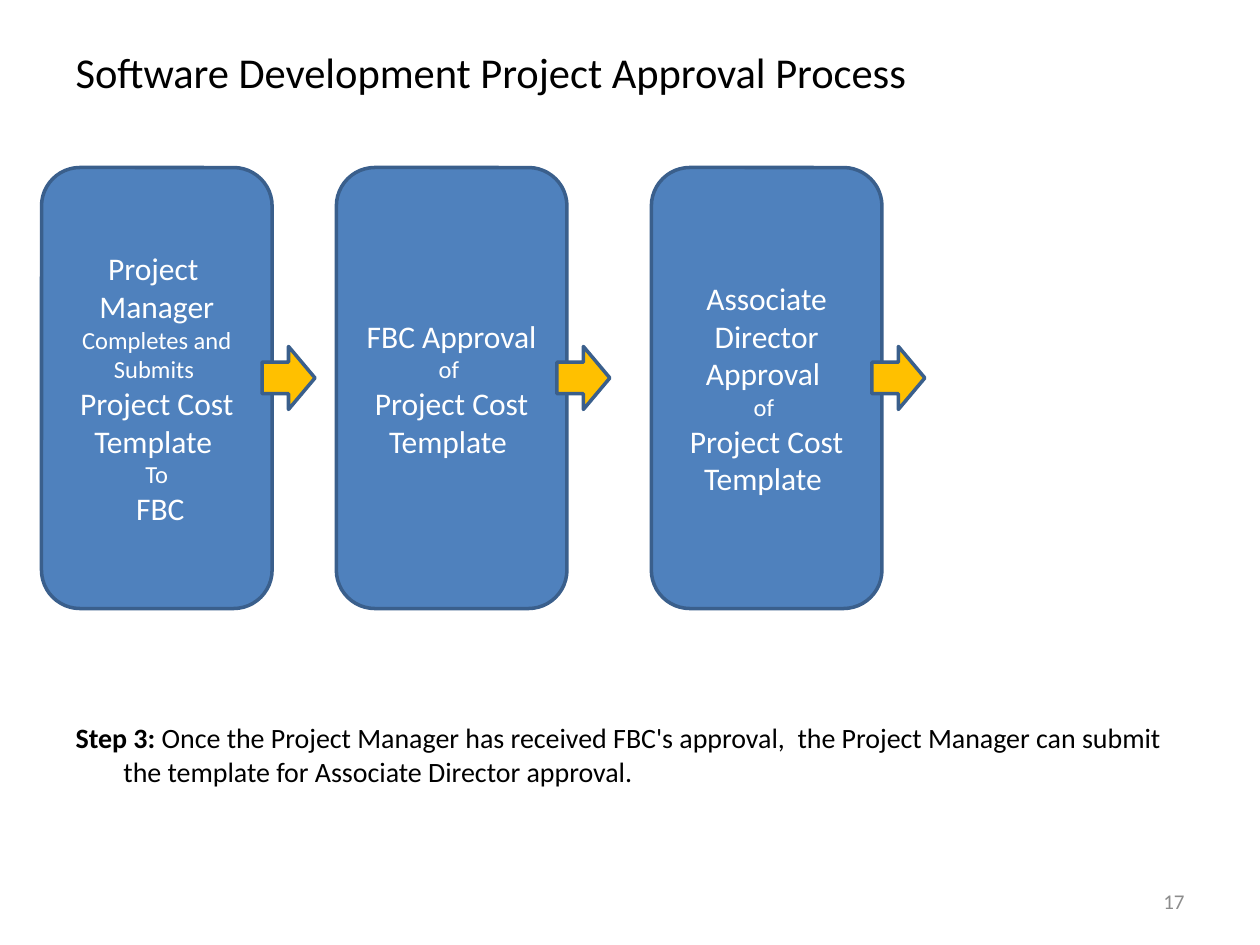
import pptx
import pptx.dml.color
import pptx.enum.shapes
import pptx.enum.text
import pptx.oxml.ns
import pptx.util
from lxml import etree

Inches = pptx.util.Inches
SHAPES = pptx.enum.shapes.MSO_SHAPE
ALIGN = pptx.enum.text.PP_ALIGN
ANCHOR = pptx.enum.text.MSO_ANCHOR
COLOURS = {
    "text": "000000",
    "step": "4F81BD",
    "step_text": "FFFFFF",
    "arrow": "FFC000",
    "outline": "3A5F8C",
    "number": "8C8C8C",
}
BIG, SMALL = 18, 14
STEPS = [
    (0.33, [
        [("Project  Manager ", BIG), ("Completes and Submits ", SMALL)],
        [("Project Cost Template ", BIG)],
        [("To", SMALL)],
        [(" FBC", BIG)],
    ]),
    (2.67, [
        [("FBC Approval ", BIG), ("of ", SMALL)],
        [("Project Cost Template ", BIG)],
    ]),
    (5.17, [
        [("Associate Director Approval ", BIG)],
        [("of ", SMALL)],
        [("Project Cost Template ", BIG)],
    ]),
]


def colour(name):
    """Return the named colour."""
    return pptx.dml.color.RGBColor.from_string(COLOURS[name])


def add_span(para, text, size, shade="text", bold=False):
    """Add one formatted run to a paragraph."""
    span = para.add_run()
    span.text = text
    span.font.name = "Calibri"
    span.font.size = pptx.util.Pt(size)
    span.font.bold = bold
    span.font.color.rgb = colour(shade)


def place(shape, left, top, width, height):
    """Set a placeholder's box in inches."""
    shape.left, shape.top = Inches(left), Inches(top)
    shape.width, shape.height = Inches(width), Inches(height)


def add_block(page, kind, fill, left, top, width, height):
    """Add a filled and outlined preset shape."""
    block = page.shapes.add_shape(
        kind, Inches(left), Inches(top), Inches(width), Inches(height))
    block.shadow.inherit = False
    block.fill.solid()
    block.fill.fore_color.rgb = colour(fill)
    block.line.color.rgb = colour("outline")
    block.line.width = pptx.util.Pt(2)
    return block


def add_title(page, left, top, width, height):
    """Fill the title placeholder."""
    title = page.shapes.title
    place(title, left, top, width, height)
    frame = title.text_frame
    frame.auto_size = pptx.enum.text.MSO_AUTO_SIZE.NONE
    frame.vertical_anchor = ANCHOR.MIDDLE
    para = frame.paragraphs[0]
    para.alignment = ALIGN.LEFT
    add_span(para, "Software Development Project Approval Process", 24.3)


def add_explanation(page, left, top, width, height):
    """Fill the body placeholder with a hanging, unbulleted paragraph."""
    body = page.placeholders[1]
    place(body, left, top, width, height)
    body.text_frame.auto_size = pptx.enum.text.MSO_AUTO_SIZE.NONE
    para = body.text_frame.paragraphs[0]
    settings = para._p.get_or_add_pPr()
    settings.set("marL", str(Inches(0.38)))
    settings.set("indent", str(-Inches(0.38)))
    etree.SubElement(settings, pptx.oxml.ns.qn("a:buNone"))
    add_span(para, "Step 3: ", 16, bold=True)
    add_span(para, "Once the Project Manager has received FBC's approval,  "
             "the Project Manager can submit the template for "
             "Associate Director approval.", 16)


def add_step(page, lines, left, top, width, height):
    """Add a process step with the arrow that overlaps its right edge."""
    box = add_block(page, SHAPES.ROUNDED_RECTANGLE, "step",
                    left, top, width, height)
    frame = box.text_frame
    frame.word_wrap = True
    frame.vertical_anchor = ANCHOR.MIDDLE
    for index, line in enumerate(lines):
        para = frame.add_paragraph() if index else frame.paragraphs[0]
        para.alignment = ALIGN.CENTER
        for text, size in line:
            add_span(para, text, size, "step_text")
    add_block(page, SHAPES.RIGHT_ARROW, "arrow",
              left + width - 0.08, top + 1.42, 0.42, 0.5)


def add_page_number(page, left, top, width, height):
    """Add the page number at the lower right."""
    box = page.shapes.add_textbox(
        Inches(left), Inches(top), Inches(width), Inches(height))
    box.text_frame.word_wrap = True
    box.text_frame.vertical_anchor = ANCHOR.MIDDLE
    para = box.text_frame.paragraphs[0]
    para.alignment = ALIGN.RIGHT
    add_span(para, "17", 12, "number")


def main():
    """Build the approval process slide."""
    deck = pptx.Presentation()
    deck.slide_width, deck.slide_height = Inches(10), Inches(7.5)
    page = deck.slides.add_slide(deck.slide_layouts[1])
    add_title(page, 0.5, 0.3, 9, 0.53)
    add_explanation(page, 0.5, 5.67, 9, 1.03)
    for left, lines in STEPS:
        add_step(page, lines, left, 1.33, 1.83, 3.5)
    add_page_number(page, 7.17, 6.95, 2.33, 0.4)
    deck.save("out.pptx")


if __name__ == "__main__":
    main()
